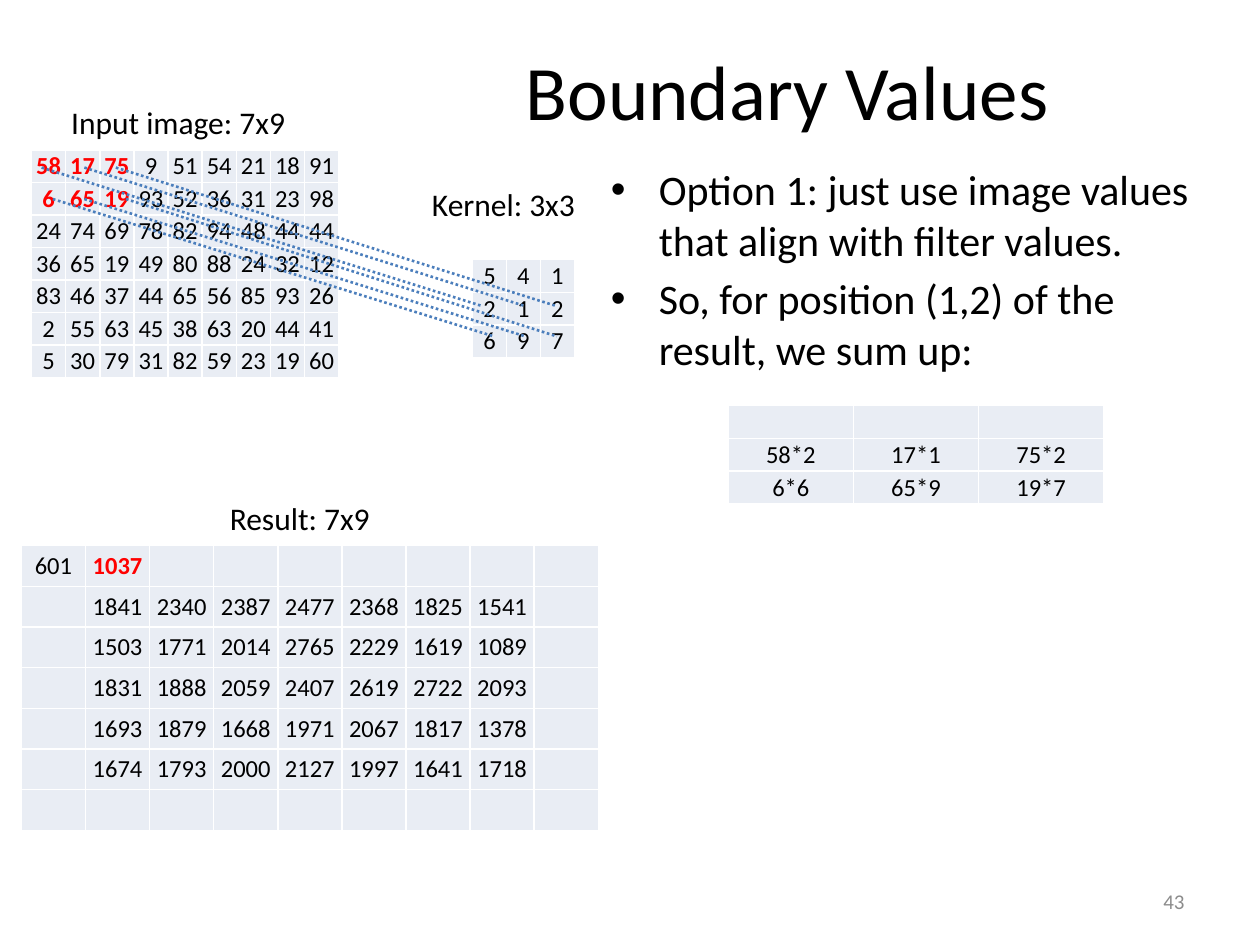
"""Builds the "Boundary Values" slide on filtering at image borders."""
from dataclasses import dataclass

from lxml.etree import SubElement
from pptx import Presentation
from pptx.dml.color import RGBColor as RGB
from pptx.enum.dml import MSO_LINE as Dash
from pptx.enum.shapes import MSO_CONNECTOR as Conn
from pptx.enum.text import MSO_ANCHOR as Anchor, PP_ALIGN as Align
from pptx.oxml.ns import qn
from pptx.util import Inches, Pt


@dataclass(frozen=True)
class Theme:
    font: str = "Calibri"
    ink: str = "000000"
    muted: str = "8C8C8C"
    accent: str = "FF0000"
    cell: str = "E9EDF4"
    border: str = "FFFFFF"
    link: str = "4B7EBC"
    title: int = 44
    body: int = 24
    label: int = 18
    grid: int = 14
    number: int = 12


class SlideBuilder:
    def __init__(self, slide, theme):
        self.slide = slide
        self.theme = theme

    def run(self, p, text, size, color=None, bold=False):
        r = p.add_run()
        r.text = text
        r.font.name = self.theme.font
        r.font.size = Pt(size)
        r.font.bold = bold
        r.font.color.rgb = RGB.from_string(color or self.theme.ink)

    def text(self, box, lines, size, color=None, align=Align.LEFT,
             anchor=Anchor.TOP, wrap=True, bullet=False):
        sp = self.slide.shapes.add_textbox(*map(Inches, box))
        tf = sp.text_frame
        tf.word_wrap = wrap
        tf.vertical_anchor = anchor
        for i, line in enumerate(lines):
            p = tf.add_paragraph() if i else tf.paragraphs[0]
            p.alignment = align
            if bullet:
                self.bullet(p, size)
            self.run(p, line, size, color)

    def bullet(self, p, size):
        p.space_before = Pt(size * 0.2)
        pPr = p._p.get_or_add_pPr()
        pPr.set("marL", str(Inches(0.38)))
        pPr.set("indent", str(-Inches(0.38)))
        SubElement(pPr, qn("a:buFont"), typeface="Arial")
        SubElement(pPr, qn("a:buChar"), char="•")

    def label(self, box, text, align=Align.CENTER):
        self.text(box, [text], self.theme.label, align=align, wrap=False)

    def grid(self, box, rows, marked=()):
        frame = self.slide.shapes.add_table(len(rows), len(rows[0]), *map(Inches, box))
        table = frame.table
        table.first_row = table.horz_banding = False
        for col in table.columns:
            col.width = Inches(box[2] / len(rows[0]))
        for i, values in enumerate(rows):
            table.rows[i].height = Inches(box[3] / len(rows))
            for j, value in enumerate(values):
                self.cell(table.cell(i, j), value, (i, j) in marked)

    def cell(self, cell, value, marked):
        t = self.theme
        cell.margin_left = cell.margin_right = cell.margin_top = cell.margin_bottom = 0
        cell.vertical_anchor = Anchor.MIDDLE
        tcPr = cell._tc.get_or_add_tcPr()
        for side in ("lnL", "lnR", "lnT", "lnB"):
            ln = SubElement(tcPr, qn(f"a:{side}"), w=str(Pt(1)))
            SubElement(SubElement(ln, qn("a:solidFill")), qn("a:srgbClr"), val=t.border)
        cell.fill.solid()
        cell.fill.fore_color.rgb = RGB.from_string(t.cell)
        p = cell.text_frame.paragraphs[0]
        p.alignment = Align.CENTER
        if value:
            self.run(p, value, t.grid, t.accent if marked else t.ink, marked)
        else:
            SubElement(p._p, qn("a:endParaRPr"), sz=str(t.grid * 100))

    def link(self, start, end):
        line = self.slide.shapes.add_connector(Conn.STRAIGHT, *map(Inches, start + end))
        line.line.color.rgb = RGB.from_string(self.theme.link)
        line.line.width = Pt(1.5)
        line.line.dash_style = Dash.ROUND_DOT
        SubElement(line._element.spPr, qn("a:effectLst"))


INPUT = """58 17 75 9 51 54 21 18 91
6 65 19 93 52 36 31 23 98
24 74 69 78 82 94 48 44 44
36 65 19 49 80 88 24 32 12
83 46 37 44 65 56 85 93 26
2 55 63 45 38 63 20 44 41
5 30 79 31 82 59 23 19 60"""
KERNEL = """5 4 1
2 1 2
6 9 7"""
INNER_RESULT = """1841 2340 2387 2477 2368 1825 1541
1503 1771 2014 2765 2229 1619 1089
1831 1888 2059 2407 2619 2722 2093
1693 1879 1668 1971 2067 1817 1378
1674 1793 2000 2127 1997 1641 1718"""
PRODUCTS = """58*2 17*1 75*2
6*6 65*9 19*7"""
LINKS = [
    (1.33, 2.43, [(0.33, 3.83), (0.67, 4.17), (0.92, 4.42)]),
    (1.58, 2.67, [(0.42, 3.92), (0.67, 4.17), (1, 4.42)]),
]


def parse_rows(block):
    return [line.split() for line in block.splitlines()]


def main():
    prs = Presentation()
    prs.slide_width, prs.slide_height = Inches(10), Inches(7.5)
    theme = Theme()
    s = SlideBuilder(prs.slides.add_slide(prs.slide_layouts[6]), theme)

    s.text((3, 0.17, 6.5, 1.08), ["Boundary Values"], theme.title,
           align=Align.CENTER, anchor=Anchor.MIDDLE)
    s.text((4.75, 1.25, 5.08, 5.67), [
        "Option 1: just use image values that align with filter values.",
        "So, for position (1,2) of the result, we sum up:",
    ], theme.body, bullet=True)
    s.text((7.17, 6.95, 2.33, 0.4), ["43"], theme.number, theme.muted,
           Align.RIGHT, Anchor.MIDDLE)

    inner = [["", *row, ""] for row in parse_rows(INNER_RESULT)]
    result = [["601", "1037"] + [""] * 7, *inner, [""] * 9]
    s.grid((0.17, 4.33, 4.58, 2.26), result, {(0, 1)})
    s.label((1.65, 3.91, 1.46, 0.4), "Result: 7x9")

    covered = {(i, j) for i in range(2) for j in range(3)}
    s.grid((0.25, 1.19, 2.44, 1.81), parse_rows(INPUT), covered)
    s.grid((3.75, 2.06, 0.81, 0.78), parse_rows(KERNEL))
    s.label((0.38, 0.77, 2.07, 0.4), "Input image: 7x9")
    s.label((3.33, 1.42, 1.35, 0.4), "Kernel: 3x3", Align.LEFT)
    s.grid((5.78, 3.22, 2.98, 0.78), [[""] * 3, *parse_rows(PRODUCTS)])

    for top, bottom, spans in LINKS:
        for left, right in spans:
            s.link((left, top), (right, bottom))

    prs.save("out.pptx")


if __name__ == "__main__":
    main()
